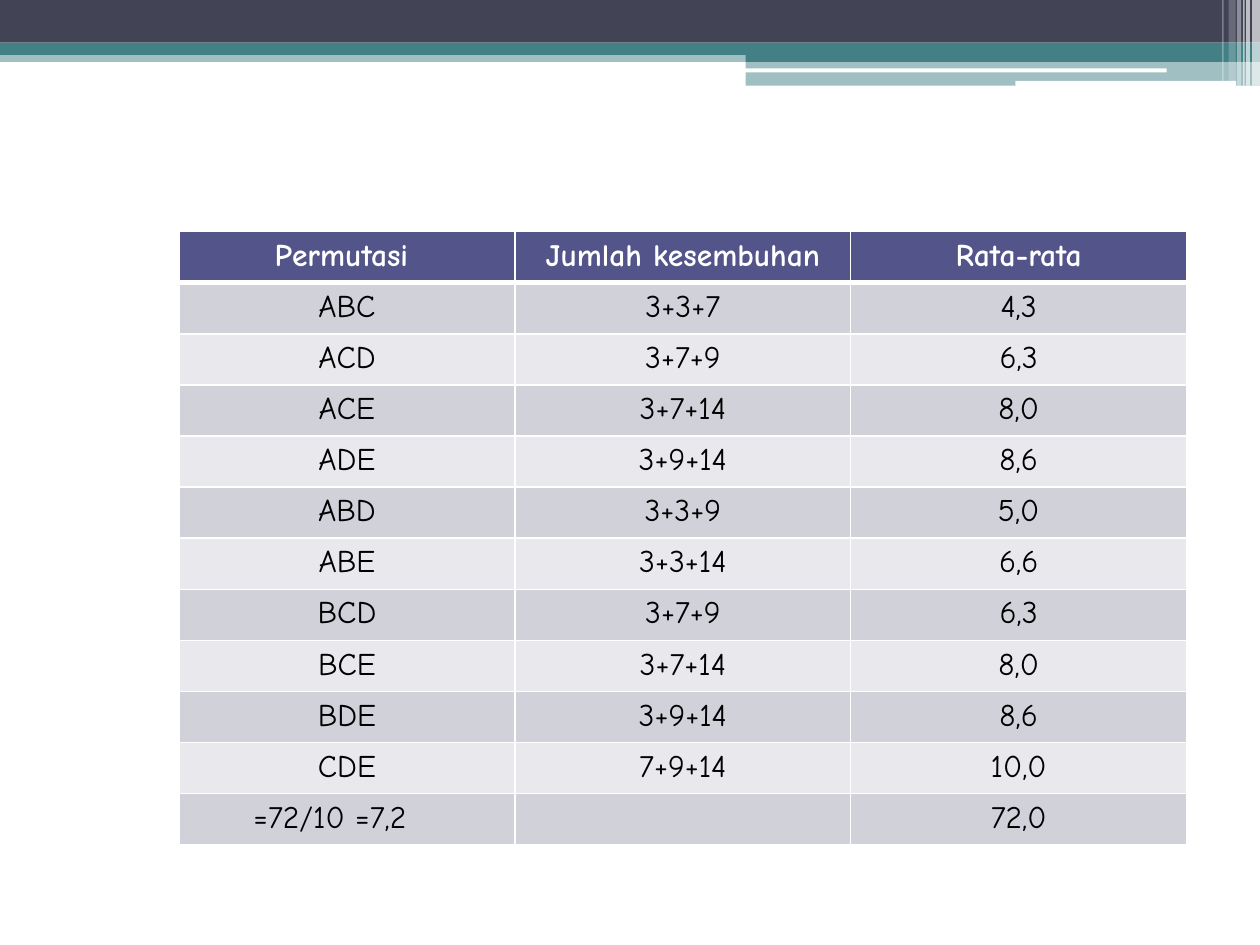
from lxml.etree import SubElement
from pptx import Presentation
from pptx.dml.color import RGBColor
from pptx.enum.shapes import MSO_SHAPE
from pptx.enum.text import MSO_ANCHOR, PP_ALIGN
from pptx.oxml.ns import qn
from pptx.util import Cm, Pt

FONT = "Comic Neue"
COLORS = {
    "navy": "424456", "teal": "438086", "white": "FFFFFF", "black": "000000",
    "header": "53548A", "dark_row": "D1D1DA", "light_row": "E9E9ED",
}
HEADER = ("Permutasi ", "Jumlah kesembuhan", "Rata-rata")
ROWS = [
    ("ABC", "3+3+7", "4,3"),
    ("ACD", "3+7+9", "6,3"),
    ("ACE", "3+7+14", "8,0"),
    ("ADE", "3+9+14", "8,6"),
    ("ABD", "3+3+9", "5,0"),
    ("ABE", "3+3+14", "6,6"),
    ("BCD", "3+7+9", "6,3"),
    ("BCE", "3+7+14", "8,0"),
    ("BDE", "3+9+14", "8,6"),
    ("CDE", "7+9+14", "10,0"),
    ("=72/10 =7,2", "", "72,0"),
]
# left, top, width, height in cm; colour; opacity in percent
BANDS = [
    (0, 1.02, 25.4, 0.23, "teal", 50),
    (0, 0, 25.4, 0.86, "navy", 100),
    (0, 0.86, 25.4, 0.25, "teal", 100),
    (15.03, 1, 10.37, 0.25, "teal", 100),
    (15.03, 1.23, 10.37, 0.5, "teal", 50),
]
PILLS = [
    (15.01, 1.38, 8.51, 0.08, "white", 100),
    (20.47, 1.63, 4.45, 0.1, "white", 100),
]
# left, width, height in cm; opacity in percent
STRIPES = [
    (25.24, 0.16, 1.73, 65), (25.12, 0.08, 1.73, 65), (25.06, 0.03, 1.73, 60),
    (24.94, 0.08, 1.73, 40), (24.77, 0.14, 1.63, 20), (24.64, 0.03, 1.63, 30),
]
TABLE_LEFT, TABLE_TOP, COL_W, ROW_H = 3.61, 4.67, 6.77, 1.03


def rgb(name):
    return RGBColor.from_string(COLORS[name])


def add_bar(s, kind, left, top, width, height, color, opacity):
    sp = s.shapes.add_shape(kind, Cm(left), Cm(top), Cm(width), Cm(height))
    sp.shadow.inherit = False
    sp.line.fill.background()
    sp.fill.solid()
    sp.fill.fore_color.rgb = rgb(color)
    if opacity < 100:
        clr = sp.fill._xPr.find(".//" + qn("a:srgbClr"))
        SubElement(clr, qn("a:alpha"), val=str(opacity * 1000))


def set_borders(cell, top, bottom):
    """Draw white borders; must run before the cell's fill is set."""
    tcPr = cell._tc.get_or_add_tcPr()
    for side, width in (("L", 1), ("R", 1), ("T", top), ("B", bottom)):
        ln = SubElement(tcPr, qn("a:ln" + side), w=str(Pt(width)))
        fill = SubElement(ln, qn("a:solidFill"))
        SubElement(fill, qn("a:srgbClr"), val=COLORS["white"])


def fill_cell(cell, text, row):
    is_header = row == 0
    set_borders(cell, 3 if row == 1 else 1, 3 if is_header else 1)
    cell.fill.solid()
    cell.fill.fore_color.rgb = rgb(
        "header" if is_header else "dark_row" if row % 2 else "light_row")
    cell.vertical_anchor = MSO_ANCHOR.TOP
    cell.text = text
    p = cell.text_frame.paragraphs[0]
    p.alignment = PP_ALIGN.CENTER
    p.font.name = FONT
    p.font.size = Pt(18)
    p.font.bold = is_header
    p.font.color.rgb = rgb("white" if is_header else "black")


def add_permutation_table(s):
    data = [HEADER] + ROWS
    n_rows, n_cols = len(data), len(HEADER)
    tbl = s.shapes.add_table(n_rows, n_cols, Cm(TABLE_LEFT), Cm(TABLE_TOP),
                             Cm(COL_W * n_cols), Cm(ROW_H * n_rows)).table
    for col in tbl.columns:
        col.width = Cm(COL_W)
    for i, values in enumerate(data):
        tbl.rows[i].height = Cm(ROW_H)
        for j, text in enumerate(values):
            fill_cell(tbl.cell(i, j), text, i)
    mean = tbl.cell(n_rows - 1, 0)
    mean.margin_left = Cm(1.5)
    mean.text_frame.paragraphs[0].alignment = PP_ALIGN.LEFT


def main():
    prs = Presentation()
    prs.slide_width, prs.slide_height = Cm(25.4), Cm(19.05)
    s = prs.slides.add_slide(prs.slide_layouts[6])
    for band in BANDS:
        add_bar(s, MSO_SHAPE.RECTANGLE, *band)
    for pill in PILLS:
        add_bar(s, MSO_SHAPE.ROUNDED_RECTANGLE, *pill)
    for left, width, height, opacity in STRIPES:
        add_bar(s, MSO_SHAPE.RECTANGLE, left, 0, width, height, "white", opacity)
    add_permutation_table(s)
    prs.save("out.pptx")


if __name__ == "__main__":
    main()
